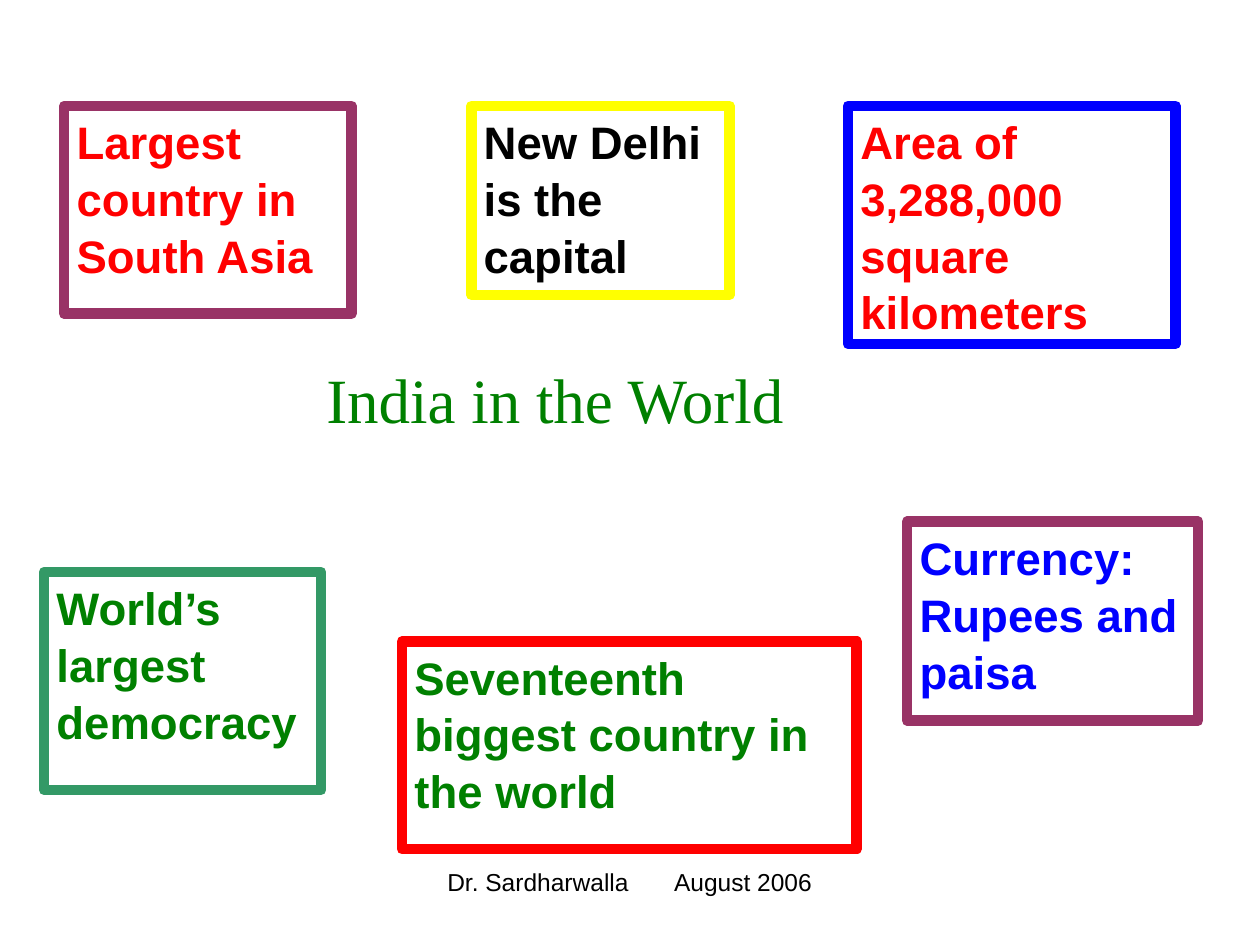
from pptx import Presentation
from pptx.dml.color import RGBColor
from pptx.enum.shapes import MSO_SHAPE
from pptx.enum.text import MSO_ANCHOR, PP_ALIGN
from pptx.oxml import parse_xml
from pptx.oxml.ns import nsdecls
from pptx.util import Inches, Pt

WHITE = RGBColor(0xFF, 0xFF, 0xFF)
BLACK = RGBColor(0x00, 0x00, 0x00)
RED = RGBColor(0xFF, 0x00, 0x00)
BLUE = RGBColor(0x00, 0x00, 0xFF)
YELLOW = RGBColor(0xFF, 0xFF, 0x00)
GREEN = RGBColor(0x00, 0x80, 0x00)
SEA_GREEN = RGBColor(0x33, 0x99, 0x66)
PLUM = RGBColor(0x99, 0x33, 0x66)

TOP_ROW = 0.84

# text, text colour, border colour, (left, top, width, height)
FACTS = [
    ("Largest country in South Asia", RED, PLUM, (0.51, TOP_ROW, 2.28, 1.65)),
    ("Seventeenth biggest country in the world", GREEN, RED, (3.19, 5.09, 3.61, 1.65)),
    ("Area of 3,288,000 square kilometers", RED, BLUE, (6.73, TOP_ROW, 2.6, 1.89)),
    ("New Delhi is the capital", BLACK, YELLOW, (3.74, TOP_ROW, 2.05, 1.5)),
    ("World’s largest democracy", GREEN, SEA_GREEN, (0.35, 4.54, 2.2, 1.73)),
    ("Currency: Rupees and paisa", BLUE, PLUM, (7.2, 4.14, 2.31, 1.58)),
]


class FactSlide:
    body_font = "Arial"
    title_font = "Times New Roman"

    def __init__(self, slide):
        self.slide = slide

    def add_text(self, paragraph, text, size, color, font=body_font, bold=False):
        run = paragraph.add_run()
        run.text = text
        run.font.name = font
        run.font.size = Pt(size)
        run.font.bold = bold
        run.font.color.rgb = color

    def title(self, text, left, top, width, height):
        title = self.slide.shapes.title
        title.left, title.top = Inches(left), Inches(top)
        title.width, title.height = Inches(width), Inches(height)
        frame = title.text_frame
        frame.word_wrap = False
        frame.vertical_anchor = MSO_ANCHOR.TOP
        paragraph = frame.paragraphs[0]
        paragraph.alignment = PP_ALIGN.CENTER
        self.add_text(paragraph, text, 36, GREEN, self.title_font)

    def fact(self, text, color, border, bounds):
        box = self.slide.shapes.add_shape(MSO_SHAPE.RECTANGLE, *map(Inches, bounds))
        box.shadow.inherit = False
        box.fill.solid()
        box.fill.fore_color.rgb = WHITE
        box.line.color.rgb = border
        box.line.width = Pt(6)
        frame = box.text_frame
        frame.word_wrap = True
        frame.vertical_anchor = MSO_ANCHOR.TOP
        paragraph = frame.paragraphs[0]
        paragraph.alignment = PP_ALIGN.LEFT
        paragraph.line_spacing = 1.04
        self.add_text(paragraph, text, 26, color, bold=True)

    def credit(self, author, date, left, top, width, height):
        """Put author and date on one line, the date at a tab stop."""
        box = self.slide.shapes.add_textbox(*map(Inches, (left, top, width, height)))
        frame = box.text_frame
        frame.word_wrap = True
        frame.margin_left = Inches(0.13)
        paragraph = frame.paragraphs[0]
        paragraph.alignment = PP_ALIGN.LEFT
        paragraph._p.get_or_add_pPr().append(parse_xml(
            f'<a:tabLst {nsdecls("a")}><a:tab pos="{Inches(1.8)}" algn="l"/></a:tabLst>'))
        self.add_text(paragraph, f"{author}\t{date}", 14, BLACK)


def main():
    deck = Presentation()
    deck.slide_width, deck.slide_height = Inches(10), Inches(7.5)
    title_only = deck.slide_layouts[5]
    india = FactSlide(deck.slides.add_slide(title_only))
    india.credit("Dr. Sardharwalla", "August 2006", 3.42, 6.83, 3.17, 0.52)
    india.title("India in the World", 1.61, 2.81, 5.59, 1.26)
    for fact in FACTS:
        india.fact(*fact)
    deck.save("out.pptx")


if __name__ == "__main__":
    main()
